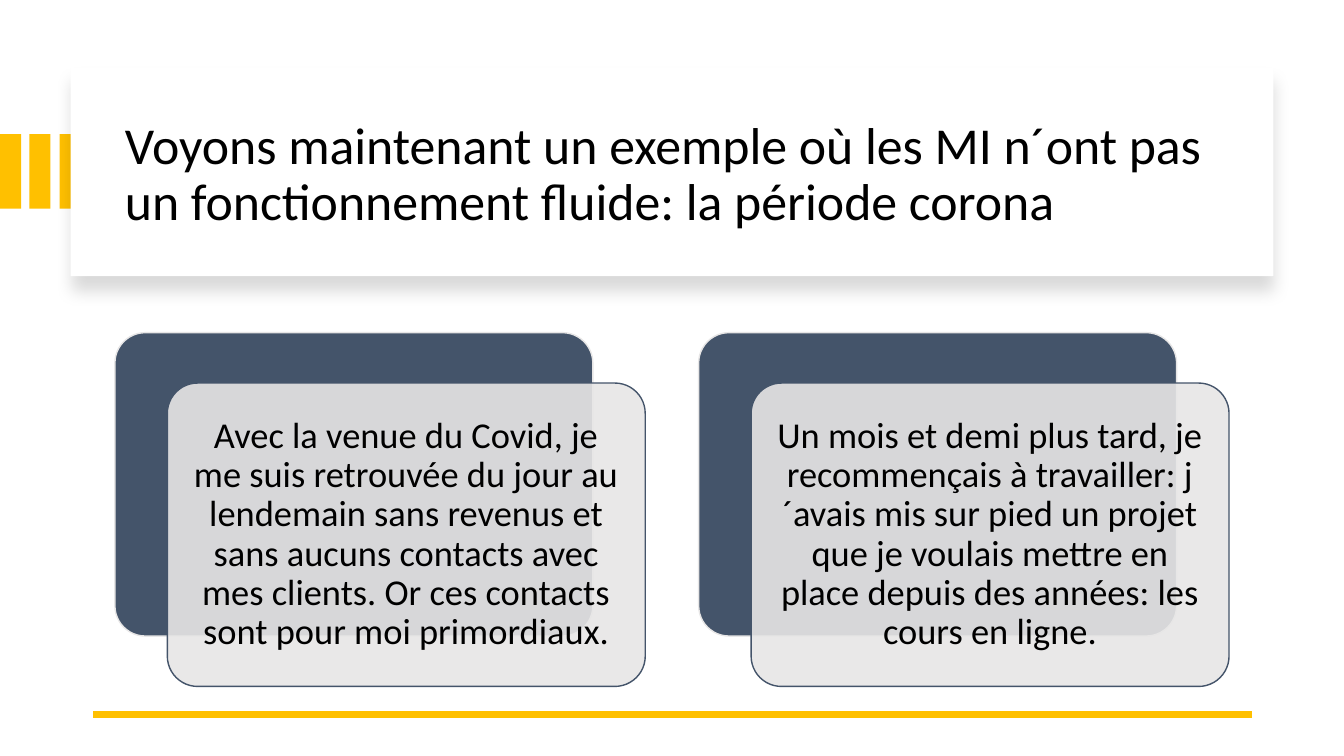
from dataclasses import dataclass

from lxml import etree
from pptx import Presentation
from pptx import util as u
from pptx.dml.color import RGBColor
from pptx.enum import shapes, text
from pptx.oxml import ns

PX = u.Inches(1) // 100


@dataclass(frozen=True)
class Theme:
    font: str = "Calibri"
    ink: str = "000000"
    paper: str = "FFFFFF"
    accent: str = "FFC000"
    slate: str = "44546A"
    mist: str = "E7E6E6"
    title_size: int = 37
    body_size: int = 26
    rule_width: float = 4.5
    border_width: int = 1


def add_node(parent, tag, **values):
    node = etree.SubElement(parent, ns.qn(tag))
    for name, value in values.items():
        node.set(name, str(value))
    return node


class SlideBuilder:
    def __init__(self, page, theme):
        self.page = page
        self.theme = theme

    def panel(self, left, top, width, height, fill, line=None, rounding=None, opacity=100):
        kind = shapes.MSO_SHAPE.RECTANGLE if rounding is None else shapes.MSO_SHAPE.ROUNDED_RECTANGLE
        shape = self.page.shapes.add_shape(kind, *(n * PX for n in (left, top, width, height)))
        shape.shadow.inherit = False
        shape.fill.solid()
        shape.fill.fore_color.rgb = RGBColor.from_string(fill)
        if rounding is not None:
            shape.adjustments[0] = rounding
        if line is None:
            shape.line.fill.background()
        else:
            shape.line.color.rgb = RGBColor.from_string(line)
            shape.line.width = u.Pt(self.theme.border_width)
        if opacity < 100:
            color = shape.fill._xPr.find(ns.qn("a:solidFill"))[0]
            add_node(color, "a:alpha", val=opacity * 1000)
        return shape

    def drop_shadow(self, shape, blur, distance, opacity):
        effects = shape._element.spPr.find(ns.qn("a:effectLst"))
        shadow = add_node(effects, "a:outerShdw", blurRad=u.Pt(blur), dist=u.Pt(distance),
                          dir=90 * 60000, algn="t", rotWithShape=0)
        color = add_node(shadow, "a:srgbClr", val=self.theme.ink)
        add_node(color, "a:alpha", val=opacity * 1000)

    def label(self, left, top, width, height, words, size, align, margins):
        box = self.page.shapes.add_textbox(*(n * PX for n in (left, top, width, height)))
        frame = box.text_frame
        sides = ("margin_left", "margin_top", "margin_right", "margin_bottom")
        frame_format = {"word_wrap": True, "vertical_anchor": text.MSO_ANCHOR.MIDDLE}
        frame_format.update({side: n * PX for side, n in zip(sides, margins)})
        para = frame.paragraphs[0]
        span = para.add_run()
        span.text = words
        formats = (
            (frame, frame_format),
            (para, {"alignment": align, "line_spacing": 0.9}),
            (span.font, {"name": self.theme.font, "size": u.Pt(size)}),
        )
        for target, values in formats:
            for name, value in values.items():
                setattr(target, name, value)
        span.font.color.rgb = RGBColor.from_string(self.theme.ink)

    def rule(self, start, end, y):
        line = self.page.shapes.add_connector(
            shapes.MSO_CONNECTOR.STRAIGHT, start * PX, y * PX, end * PX, y * PX)
        line.line.color.rgb = RGBColor.from_string(self.theme.accent)
        line.line.width = u.Pt(self.theme.rule_width)
        add_node(line._element.spPr, "a:effectLst")

    def card(self, left, top, words):
        theme, width, height = self.theme, 474, 301
        front_left, front_top, inset = left + 52, top + 50, 9
        self.panel(left, top, width, height, theme.slate, theme.mist, rounding=0.1)
        self.panel(front_left, front_top, width, height, theme.mist, theme.slate,
                   rounding=0.1, opacity=90)
        self.label(front_left + inset, front_top + inset, width - 2 * inset, height - 2 * inset,
                   words, theme.body_size, text.PP_ALIGN.CENTER, (11, 11, 11, 11))


def main():
    deck = Presentation()
    deck.slide_width, deck.slide_height = 1333 * PX, 750 * PX
    page = deck.slides.add_slide(deck.slide_layouts[6])
    theme = Theme()
    builder = SlideBuilder(page, theme)

    # Accent bars at the left edge
    for index in range(3):
        builder.panel(index * 59 // 2, 133, 21, 74, theme.accent)

    # Title on its raised panel
    title_panel = builder.panel(70, 67, 1193, 207, theme.paper)
    builder.drop_shadow(title_panel, blur=11, distance=10, opacity=15)
    builder.label(114, 89, 1113, 170,
                  "Voyons maintenant un exemple où les MI n´ont pas un fonctionnement fluide: "
                  "la période corona",
                  theme.title_size, text.PP_ALIGN.LEFT, (10, 5, 10, 5))

    # Bottom rule
    builder.rule(1242, 92, 709)

    # Two story cards
    stories = (
        "Avec la venue du Covid, je me suis retrouvée du jour au lendemain sans revenus et "
        "sans aucuns contacts avec mes clients. Or ces contacts sont pour moi primordiaux.",
        "Un mois et demi plus tard, je recommençais à travailler: j´avais mis sur pied un "
        "projet que je voulais mettre en place depuis des années: les cours en ligne.",
    )
    for index, story in enumerate(stories):
        builder.card(114 + index * 579, 330, story)

    deck.save("out.pptx")


if __name__ == "__main__":
    main()
